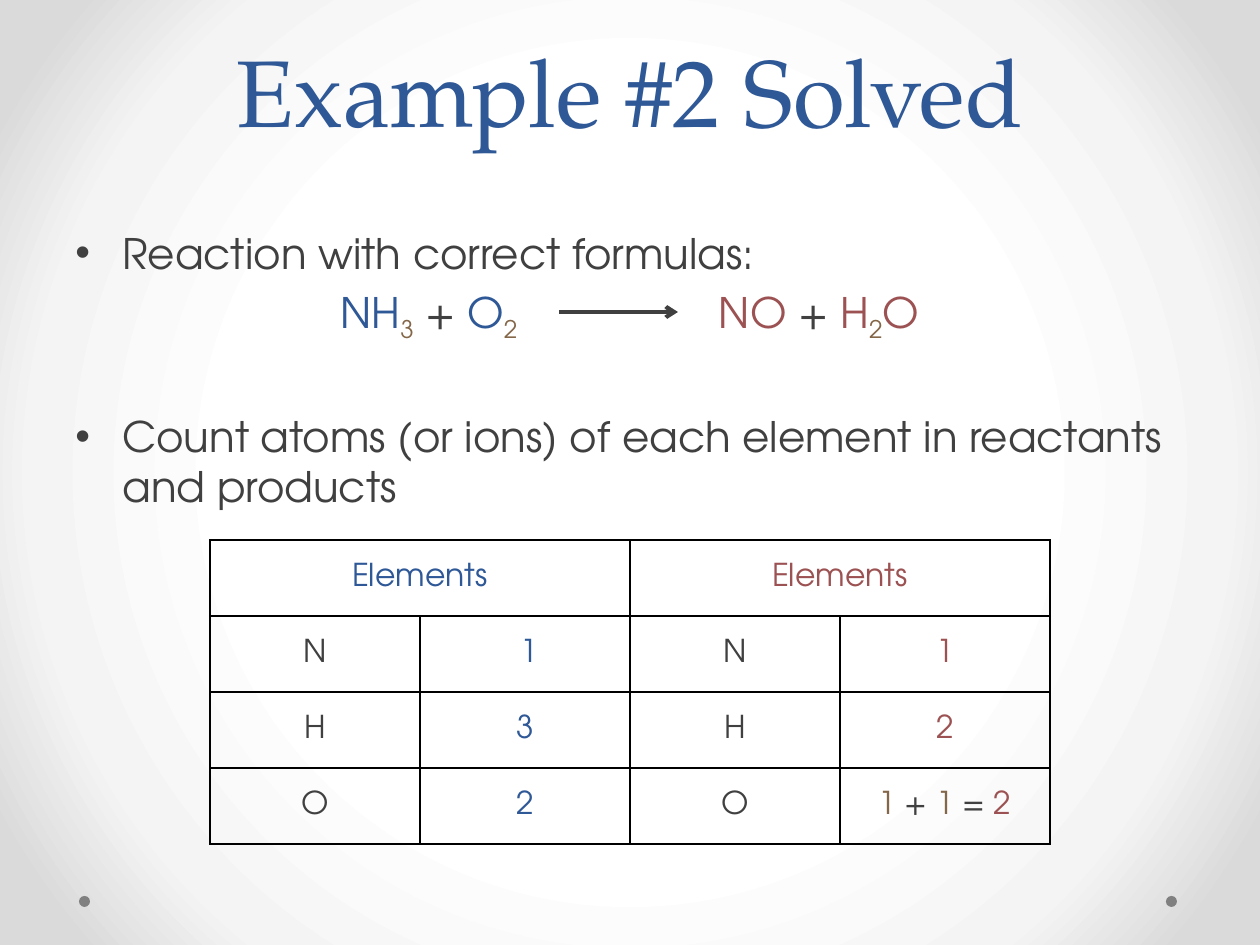
from lxml import etree
from pptx import Presentation
from pptx.dml.color import RGBColor
from pptx.enum.shapes import MSO_CONNECTOR, MSO_SHAPE
from pptx.enum.text import MSO_ANCHOR, PP_ALIGN
from pptx.oxml import parse_xml
from pptx.oxml.ns import nsdecls, qn
from pptx.util import Emu, Pt

LEFT, CENTER = PP_ALIGN.LEFT, PP_ALIGN.CENTER
MIDDLE, BOTTOM, TOP = MSO_ANCHOR.MIDDLE, MSO_ANCHOR.BOTTOM, MSO_ANCHOR.TOP
STRAIGHT, ELLIPSE = MSO_CONNECTOR.STRAIGHT, MSO_SHAPE.OVAL
BLANK_LAYOUT = 6
COLORS = {
    "blue": "2F5897", "red": "9C5252", "brown": "846648",
    "text": "404040", "dot": "808080", "border": "000000",
}
GLOW = {50: "FFFFFF", 76: "F4F4F4", 92: "DADADA"}
HEADING_FONT, BODY_FONT = "TeX Gyre Pagella", "TeX Gyre Adventor"
REACTANTS = [
    ("NH", "blue"), ("3", "brown", True), (" + ", "text"), ("O", "blue"), ("2", "brown", True),
]
PRODUCTS = [
    ("NO", "red"), (" + ", "text"), ("H", "red"), ("2", "brown", True), ("O", "red"),
]
OXYGEN_SUM = [("1", "brown"), (" + ", "text"), ("1", "brown"), (" = ", "text"), ("2", "red")]
COUNTS = [
    ("N", " 1", [("1", "red")]),
    ("H", "3", [("2", "red")]),
    ("O", "2", OXYGEN_SUM),
]


def px(length):
    """Turn pixels at 126 to the inch into EMU."""
    return Emu(round(length * 914400 / 126))


def color(name):
    """Look up a named colour."""
    return RGBColor.from_string(COLORS[name])


def write(para, spans, size=24, font=BODY_FONT, align=LEFT, before=0, bullet=False):
    """Fill a paragraph with (text, colour, subscript) spans."""
    para.alignment = align
    para.space_before = Pt(before)
    if bullet:
        props = para._p.get_or_add_pPr()
        props.set("marL", str(px(47)))
        props.set("indent", str(-px(47)))
        etree.SubElement(props, qn("a:buFont")).set("typeface", "Arial")
        etree.SubElement(props, qn("a:buChar")).set("char", "•")
    for text, tint, *subscript in spans:
        span = para.add_run()
        span.text = text
        span.font.size, span.font.name, span.font.bold = Pt(size), font, False
        span.font.color.rgb = color(tint)
        if subscript:
            span._r.get_or_add_rPr().set("baseline", "-25000")


def add_text_frame(page, box, anchor=TOP):
    """Add a wrapping text box and return its frame."""
    frame = page.shapes.add_textbox(*map(px, box)).text_frame
    frame.word_wrap = True
    frame.vertical_anchor = anchor
    return frame


def add_backdrop(page, box):
    """Paint the radial background and the two footer dots."""
    stops = "".join(
        f'<a:gs pos="{place * 1000}"><a:srgbClr val="{tint}"/></a:gs>'
        for place, tint in GLOW.items()
    )
    page._element.cSld.insert(0, parse_xml(
        f'<p:bg {nsdecls("p", "a")}><p:bgPr><a:gradFill rotWithShape="1"><a:gsLst>{stops}</a:gsLst>'
        '<a:path path="circle"><a:fillToRect l="50000" t="50000" r="50000" b="50000"/></a:path>'
        '</a:gradFill><a:effectLst/></p:bgPr></p:bg>'
    ))
    left, top, width, height = box
    for x in (left + 79, left + width - 94):
        dot = page.shapes.add_shape(ELLIPSE, px(x), px(top + height - 49), px(11), px(11))
        dot.shadow.inherit = False
        dot.fill.solid()
        dot.fill.fore_color.rgb = color("dot")
        dot.line.fill.background()


def add_title(page, box):
    """Add the centred slide title."""
    para = add_text_frame(page, box, BOTTOM).paragraphs[0]
    write(para, [("Example #2 Solved", "blue")], size=54, font=HEADING_FONT, align=CENTER)
    para.line_spacing = Pt(58)


def add_steps(page, box):
    """Add the two bullets, leaving room for the equation between them."""
    frame = add_text_frame(page, box)
    write(frame.paragraphs[0], [("Reaction with correct formulas:", "text")], bullet=True)
    task = "Count atoms (or ions) of each element in reactants and products"
    write(frame.add_paragraph(), [(task, "text")], before=76, bullet=True)


def add_equation(page, box):
    """Add reactants and products at the ends of the box and an arrow between."""
    left, top, width, height = box
    side = 240
    for x, spans in ((left, REACTANTS), (left + width - side, PRODUCTS)):
        frame = add_text_frame(page, (x, top, side, height))
        write(frame.paragraphs[0], spans, align=CENTER)
    y = px(top + 32)
    arrow = page.shapes.add_connector(STRAIGHT, px(left + 250), y, px(left + 369), y)
    arrow.line.color.rgb = color("text")
    arrow.line.width = Pt(2.25)
    etree.SubElement(arrow.line._get_or_add_ln(), qn("a:tailEnd")).set("type", "arrow")
    etree.SubElement(arrow._element.spPr, qn("a:effectLst"))


def style_cell(cell):
    """Give a cell thin borders, no fill and a middle anchor."""
    props = cell._tc.get_or_add_tcPr()
    for side in ("lnL", "lnR", "lnT", "lnB"):
        line = etree.SubElement(props, qn(f"a:{side}"), w=str(Pt(1)))
        fill = etree.SubElement(line, qn("a:solidFill"))
        etree.SubElement(fill, qn("a:srgbClr")).set("val", COLORS["border"])
    cell.fill.background()
    cell.vertical_anchor = MIDDLE


def add_count_table(page, box):
    """Add the table of atom counts for both sides."""
    table = page.shapes.add_table(len(COUNTS) + 1, 4, *map(px, box)).table
    table.first_row = table.horz_banding = False
    for row in table.rows:
        for cell in row.cells:
            style_cell(cell)
    for column, tint in ((0, "blue"), (2, "red")):
        header = table.cell(0, column)
        header.merge(table.cell(0, column + 1))
        write(header.text_frame.paragraphs[0], [("Elements", tint)], size=18, align=CENTER)
    for row, (element, reactants, products) in enumerate(COUNTS, 1):
        name = [(element, "text")]
        for column, spans in enumerate((name, [(reactants, "blue")], name, products)):
            para = table.cell(row, column).text_frame.paragraphs[0]
            write(para, spans, size=18, align=CENTER)


def main():
    """Build and save the slide."""
    deck = Presentation()
    deck.slide_width, deck.slide_height = px(1260), px(945)
    page = deck.slides.add_slide(deck.slide_layouts[BLANK_LAYOUT])
    add_backdrop(page, (0, 0, 1260, 945))
    add_title(page, (63, 0, 1134, 153))
    add_steps(page, (63, 221, 1134, 300))
    add_equation(page, (309, 280, 630, 64))
    add_count_table(page, (210, 540, 840, 304))
    deck.save("out.pptx")


if __name__ == "__main__":
    main()
